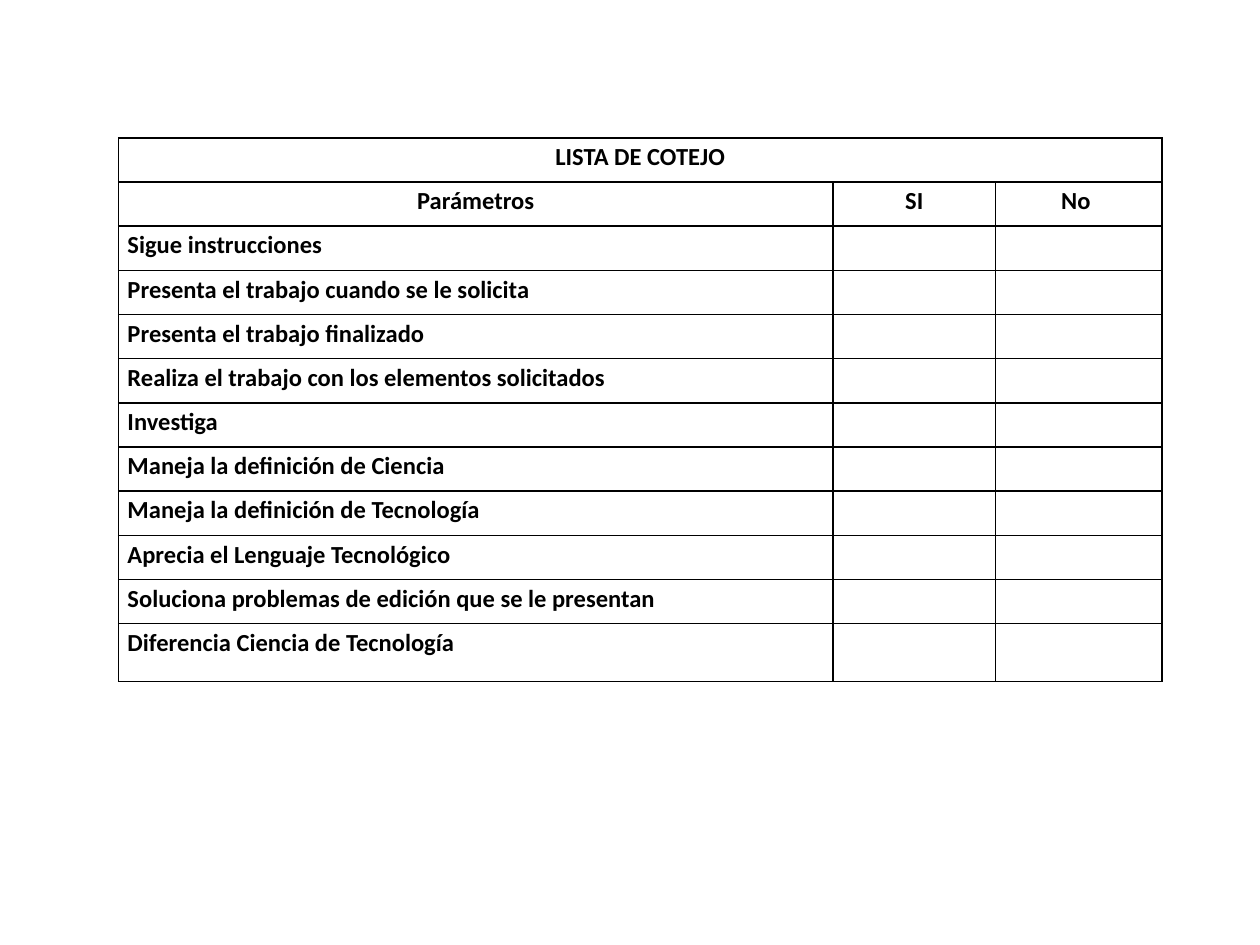
"""Builds a one-slide checklist table for assessing Ciencia and Tecnología work."""
import dataclasses

import lxml.etree
import pptx
import pptx.dml.color
import pptx.enum.text
import pptx.oxml.ns
import pptx.util


@dataclasses.dataclass(frozen=True)
class Theme:
    font: str = "Calibri"
    ink: str = "000000"
    text_size: int = 14
    border_width: int = 1


def add_borders(cell, color, points):
    properties = cell._tc.get_or_add_tcPr()
    for position, side in enumerate(("lnL", "lnR", "lnT", "lnB")):
        line = lxml.etree.Element(pptx.oxml.ns.qn(f"a:{side}"), w=str(pptx.util.Pt(points)))
        fill = lxml.etree.SubElement(line, pptx.oxml.ns.qn("a:solidFill"))
        lxml.etree.SubElement(fill, pptx.oxml.ns.qn("a:srgbClr"), val=color)
        properties.insert(position, line)


theme = Theme()
Cm = pptx.util.Cm
column_widths = [14.4, 3.28, 3.35]
row_heights = [0.887] * 11 + [1.17]
row_heights = [round(height, 2) for height in row_heights]
parameters = [
    "Sigue instrucciones",
    "Presenta el trabajo cuando se le solicita",
    "Presenta el trabajo finalizado",
    "Realiza el trabajo con los elementos solicitados",
    "Investiga",
    "Maneja la definición de Ciencia",
    "Maneja la definición de Tecnología",
    "Aprecia el Lenguaje Tecnológico",
    "Soluciona problemas de edición que se le presentan",
    "Diferencia Ciencia de Tecnología",
]
header_rows = [["LISTA DE COTEJO", "", ""], ["Parámetros", "SI", "No "]]
rows = header_rows + [[parameter, "", ""] for parameter in parameters]

deck = pptx.Presentation()
deck.slide_width, deck.slide_height = Cm(25.4), Cm(19.05)
page = deck.slides.add_slide(deck.slide_layouts[6])
checklist = page.shapes.add_table(
    len(rows), len(column_widths), Cm(2.39), Cm(2.78),
    Cm(sum(column_widths)), Cm(sum(row_heights)),
).table

for column, width in zip(checklist.columns, column_widths):
    column.width = Cm(width)
for table_row, height in zip(checklist.rows, row_heights):
    table_row.height = Cm(height)

for row_index, texts in enumerate(rows):
    for column_index, text in enumerate(texts):
        cell = checklist.cell(row_index, column_index)
        cell.margin_left = cell.margin_right = Cm(0.18)
        cell.margin_top = cell.margin_bottom = Cm(0)
        cell.fill.background()
        add_borders(cell, theme.ink, theme.border_width)
        if not text:
            continue
        para = cell.text_frame.paragraphs[0]
        para.line_spacing = 1.15
        if row_index < len(header_rows):
            para.alignment = pptx.enum.text.PP_ALIGN.CENTER
        span = para.add_run()
        span.text = text
        span.font.name = theme.font
        span.font.size = pptx.util.Pt(theme.text_size)
        span.font.bold = True
        span.font.color.rgb = pptx.dml.color.RGBColor.from_string(theme.ink)

checklist.cell(0, 0).merge(checklist.cell(0, len(column_widths) - 1))

deck.save("out.pptx")
